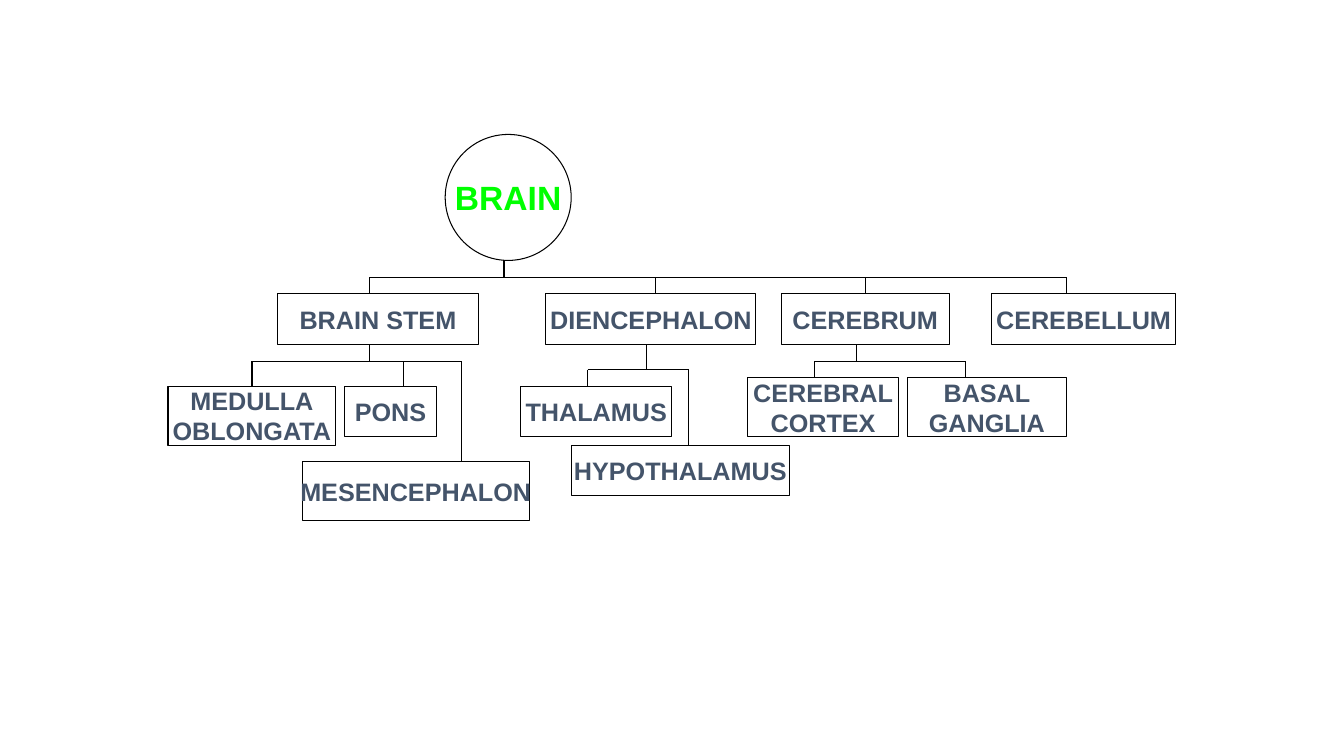
"""Build a one-slide tree diagram of the divisions of the brain."""
from dataclasses import dataclass

from pptx import Presentation
from pptx import util as u
from pptx.dml.color import RGBColor
from pptx.enum import shapes, text
from pptx.oxml.ns import qn
from lxml import etree

PX = u.Inches(1) // 96


@dataclass(frozen=True)
class Theme:
    """Colours and type sizes of the slide."""
    paper: RGBColor = RGBColor(255, 255, 255)
    ink: RGBColor = RGBColor(0, 0, 0)
    root: RGBColor = RGBColor(0, 255, 0)
    label: RGBColor = RGBColor(0x44, 0x54, 0x6A)
    font: str = "Arial"
    root_size: int = 24
    label_size: int = 18
    line: float = 0.75


@dataclass(frozen=True)
class Node:
    """A region of the brain, offset from its parent; drop and stem run from its left edge."""
    name: str
    dx: int
    dy: int
    w: int
    h: int = 48
    drop: int = 0
    stem: int = 0
    gap: int = 16
    children: tuple = ()


THEME = Theme()

BRAIN = Node("BRAIN", 0, 0, 120, 120, stem=56, children=(
    Node("BRAIN STEM", -160, 152, 192, drop=88, stem=88, children=(
        Node("MEDULLA\nOBLONGATA", -104, 88, 160, 56, drop=80),
        Node("PONS", 64, 88, 88, drop=56),
        Node("MESENCEPHALON", 24, 160, 216, 56, drop=152),
    )),
    Node("DIENCEPHALON", 96, 152, 200, drop=104, stem=96, gap=24, children=(
        Node("THALAMUS", -24, 88, 144, drop=64),
        Node("HYPOTHALAMUS", 24, 144, 208, drop=112),
    )),
    Node("CEREBRUM", 320, 152, 160, drop=80, stem=72, children=(
        Node("CEREBRAL\nCORTEX", -32, 80, 144, 56, drop=64),
        Node("BASAL\nGANGLIA", 120, 80, 152, 56, drop=56),
    )),
    Node("CEREBELLUM", 520, 152, 176, drop=72),
))


def add_label(s, kind, name, box, color, size):
    """Draw an outlined shape with centred bold text in the given box."""
    sp = s.shapes.add_shape(kind, *(n * PX for n in box))
    sp.shadow.inherit = False
    sp.fill.solid()
    sp.fill.fore_color.rgb = THEME.paper
    sp.line.color.rgb = THEME.ink
    sp.line.width = u.Pt(THEME.line)
    tf = sp.text_frame
    tf.text = name
    tf.word_wrap = False
    tf.vertical_anchor = text.MSO_ANCHOR.MIDDLE
    for p in tf.paragraphs:
        p.alignment = text.PP_ALIGN.CENTER
        for r in p.runs:
            r.font.name = THEME.font
            r.font.size = u.Pt(size)
            r.font.bold = True
            r.font.color.rgb = color


def add_line(s, *ends):
    """Draw a straight line between two points."""
    cx = s.shapes.add_connector(shapes.MSO_CONNECTOR.STRAIGHT, *(n * PX for n in ends))
    cx.line.color.rgb = THEME.ink
    cx.line.width = u.Pt(THEME.line)
    etree.SubElement(cx._element.spPr, qn("a:effectLst"))


def add_branch(s, node, x, y, is_root=False):
    """Draw a node at the given corner, then its lines and children."""
    box = (x, y, node.w, node.h)
    if is_root:
        add_label(s, shapes.MSO_SHAPE.OVAL, node.name, box, THEME.root, THEME.root_size)
    else:
        add_label(s, shapes.MSO_SHAPE.RECTANGLE, node.name, box, THEME.label, THEME.label_size)
    if not node.children:
        return
    bottom = y + node.h
    bar = bottom + node.gap
    drops = [x + child.dx + child.drop for child in node.children]
    add_line(s, x + node.stem, bottom, x + node.stem, bar)
    add_line(s, drops[0], bar, drops[-1], bar)
    for child, drop in zip(node.children, drops):
        add_line(s, drop, bar, drop, y + child.dy)
        add_branch(s, child, x + child.dx, y + child.dy)


def main():
    """Build and save the presentation."""
    prs = Presentation()
    prs.slide_width, prs.slide_height = 1280 * PX, 720 * PX
    s = prs.slides.add_slide(prs.slide_layouts[6])
    add_branch(s, BRAIN, 424, 128, is_root=True)
    prs.save("out.pptx")


if __name__ == "__main__":
    main()
